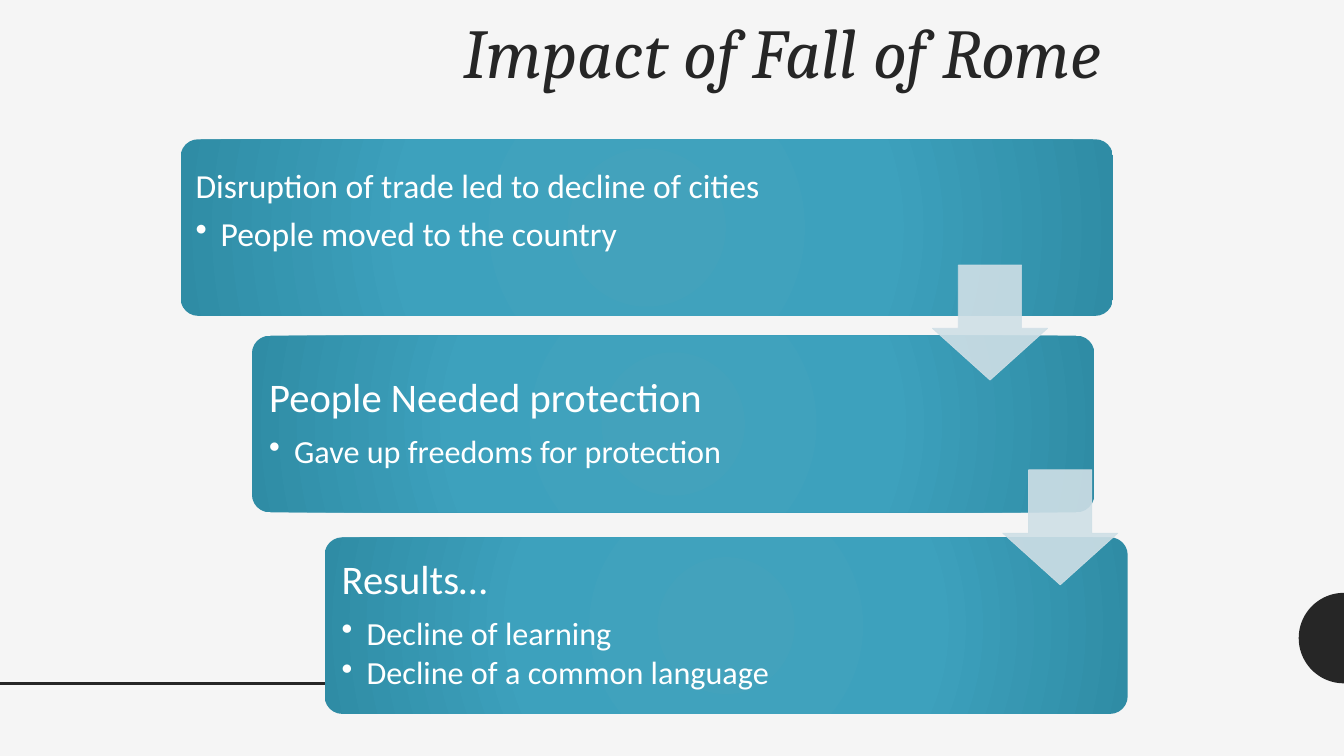
from dataclasses import dataclass
from math import cos, pi, sin

from lxml import etree
from pptx import Presentation
from pptx.dml.color import RGBColor
from pptx.enum.shapes import MSO_CONNECTOR, MSO_SHAPE
from pptx.enum.text import MSO_ANCHOR, PP_ALIGN
from pptx.oxml.ns import qn
from pptx.util import Cm, Pt

ROUNDED = MSO_SHAPE.ROUNDED_RECTANGLE
DOWN_ARROW = MSO_SHAPE.DOWN_ARROW
STRAIGHT = MSO_CONNECTOR.STRAIGHT
TOP, MIDDLE = MSO_ANCHOR.TOP, MSO_ANCHOR.MIDDLE
LEFT, RIGHT = PP_ALIGN.LEFT, PP_ALIGN.RIGHT

SLIDE_WIDTH, SLIDE_HEIGHT = 33.87, 19.05
STEP_HEIGHT = 4.45
ARROW_SIZE = 2.9


@dataclass(frozen=True)
class Theme:
    background: str = "F5F5F5"
    ink: str = "262626"
    step_text: str = "FFFFFF"
    arrow: str = "CFDFE6"
    gradient: tuple = ((0, "43A2BC"), (50, "3DA1BD"), (100, "2F8CA5"))
    title_font: str = "Cambria"
    body_font: str = "Calibri"
    title_size: float = 50
    small_heading_size: float = 24
    heading_size: float = 29
    bullet_size: float = 23


THEME = Theme()

# left, top, width, bottom inset, heading size, bullet size, heading, bullets
STEPS = (
    (4.55, 3.51, 23.5, 1.07, THEME.small_heading_size, THEME.small_heading_size,
     "Disruption of trade led to decline of cities",
     ("People moved to the country",)),
    (6.35, 8.46, 21.23, 0.3, THEME.heading_size, THEME.bullet_size,
     "People Needed protection",
     ("Gave up freedoms for protection",)),
    (8.18, 13.54, 20.24, 0.3, THEME.heading_size, THEME.bullet_size,
     "Results…",
     ("Decline of learning", "Decline of a common language")),
)
ARROWS = ((23.5, 6.68), (25.27, 11.84))


def rgb(value):
    return RGBColor.from_string(value)


def add_child(parent, tag, **attributes):
    child = etree.SubElement(parent, qn(tag))
    for key, value in attributes.items():
        child.set(key, str(value))
    return child


def make_translucent(fill, percent):
    for color in fill._xPr.iter(qn("a:srgbClr")):
        add_child(color, "a:alpha", val=percent * 1000)


def fill_radial(shape, stops):
    """Give the shape a circular gradient and no outline."""
    shape.line.fill.background()
    gradient = etree.Element(qn("a:gradFill"), rotWithShape="1")
    stop_list = add_child(gradient, "a:gsLst")
    for position, color in stops:
        stop = add_child(stop_list, "a:gs", pos=position * 1000)
        add_child(stop, "a:srgbClr", val=color)
    circle = add_child(gradient, "a:path", path="circle")
    add_child(circle, "a:fillToRect", l=50000, t=50000, r=50000, b=50000)
    shape._element.spPr.find(qn("a:prstGeom")).addnext(gradient)


def add_text_box(slide, box, insets, anchor):
    frame = slide.shapes.add_textbox(*map(Cm, box)).text_frame
    frame.word_wrap = True
    frame.vertical_anchor = anchor
    (frame.margin_left, frame.margin_top,
     frame.margin_right, frame.margin_bottom) = map(Cm, insets)
    return frame


def write(paragraph, text, *, font, size, color, italic=False, align=LEFT,
          after=0, bullet=False):
    paragraph.alignment = align
    paragraph.line_spacing = 0.9
    paragraph.space_after = Pt(after)
    run = paragraph.add_run()
    run.text = text
    run.font.name = font
    run.font.size = Pt(size)
    run.font.italic = italic
    run.font.color.rgb = rgb(color)
    if bullet:
        properties = paragraph._p.get_or_add_pPr()
        properties.set("marL", str(Cm(0.63)))
        properties.set("indent", str(-Cm(0.63)))
        add_child(properties, "a:buChar", char="•")


def add_backdrop(slide):
    slide.background.fill.solid()
    slide.background.fill.fore_color.rgb = rgb(THEME.background)

    radius, center_y = 1.14, 16.08
    angles = [pi / 2 + pi * step / 48 for step in range(49)]
    points = [(Cm(SLIDE_WIDTH + radius * cos(angle)),
               Cm(center_y - radius * sin(angle))) for angle in angles]
    builder = slide.shapes.build_freeform(*points[0])
    builder.add_line_segments(points[1:], close=True)
    half_disc = builder.convert_to_shape()
    half_disc.shadow.inherit = False
    half_disc.fill.solid()
    half_disc.fill.fore_color.rgb = rgb(THEME.ink)
    half_disc.line.fill.background()

    rule = slide.shapes.add_connector(
        STRAIGHT, Cm(0), Cm(17.22), Cm(12.5), Cm(17.22))
    rule.line.color.rgb = rgb(THEME.ink)
    rule.line.width = Pt(2)
    add_child(rule._element.spPr, "a:effectLst")


def add_title(slide, box):
    frame = add_text_box(slide, box, (0.25, 0.13, 0.63, 0.13), TOP)
    write(frame.paragraphs[0], "Impact of Fall of Rome",
          font=THEME.title_font, size=THEME.title_size, color=THEME.ink,
          italic=True, align=RIGHT)


def add_step(slide, box, bottom_inset, heading_size, bullet_size, heading, bullets):
    left, top, width, height = box
    panel = slide.shapes.add_shape(ROUNDED, *map(Cm, box))
    panel.adjustments[0] = 0.1
    panel.shadow.inherit = False
    fill_radial(panel, THEME.gradient)

    edge = 0.13
    inset = heading_size / 96
    frame = add_text_box(
        slide, (left + edge, top + edge, width * 0.76, height - 2 * edge),
        (inset, inset, inset, bottom_inset), MIDDLE)
    style = {"font": THEME.body_font, "color": THEME.step_text}
    write(frame.paragraphs[0], heading, size=heading_size,
          after=heading_size * 0.35, **style)
    for bullet in bullets:
        write(frame.add_paragraph(), bullet, size=bullet_size,
              after=bullet_size * 0.15, bullet=True, **style)


def add_arrow(slide, box):
    arrow = slide.shapes.add_shape(DOWN_ARROW, *map(Cm, box))
    arrow.adjustments[0] = 0.55
    arrow.adjustments[1] = 0.45
    arrow.shadow.inherit = False
    arrow.fill.solid()
    arrow.fill.fore_color.rgb = rgb(THEME.arrow)
    arrow.line.color.rgb = rgb(THEME.arrow)
    arrow.line.width = Pt(0.5)
    make_translucent(arrow.fill, 90)


def main():
    presentation = Presentation()
    presentation.slide_width = Cm(SLIDE_WIDTH)
    presentation.slide_height = Cm(SLIDE_HEIGHT)
    slide = presentation.slides.add_slide(presentation.slide_layouts[6])

    add_backdrop(slide)
    add_title(slide, (5.54, 0.33, 22.86, 3.18))
    for left, top, width, *content in STEPS:
        add_step(slide, (left, top, width, STEP_HEIGHT), *content)
    for left, top in ARROWS:
        add_arrow(slide, (left, top, ARROW_SIZE, ARROW_SIZE))

    presentation.save("out.pptx")


if __name__ == "__main__":
    main()
